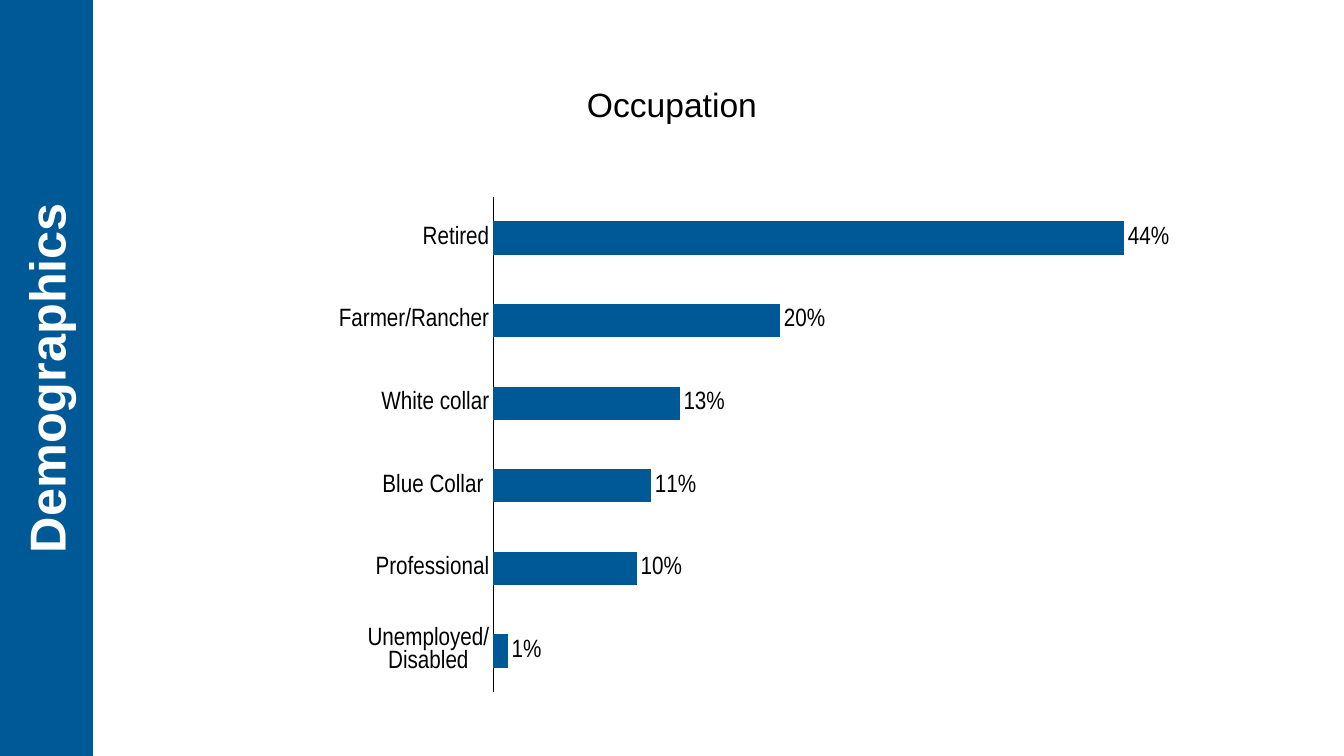
import pptx
import pptx.chart.data
import pptx.dml.color
import pptx.enum.chart
import pptx.enum.shapes
import pptx.enum.text
import pptx.oxml
import pptx.oxml.ns
import pptx.util

PX = 914400 / 100.8
WIDTH, HEIGHT = 1344, 756
BLUE = pptx.dml.color.RGBColor(0x00, 0x59, 0x97)
BLACK = pptx.dml.color.RGBColor(0, 0, 0)
WHITE = pptx.dml.color.RGBColor(0xFF, 0xFF, 0xFF)
FONT, LABEL_FONT = "Arial", "Arial Narrow"
OCCUPATIONS = {
    "Retired": 0.44,
    "Farmer/Rancher": 0.20,
    "White collar": 0.13,
    "Blue Collar ": 0.11,
    "Professional": 0.10,
    "Unemployed/Disabled": 0.01,
}


def px(*lengths):
    return [pptx.util.Emu(round(n * PX)) for n in lengths]


def style_font(font, size, color, name=FONT, bold=False):
    font.name, font.size, font.bold = name, pptx.util.Pt(size), bold
    font.color.rgb = color


def write_line(tf, text, size, color, bold=False):
    p = tf.paragraphs[0]
    p.alignment = pptx.enum.text.PP_ALIGN.CENTER
    p.space_before = pptx.util.Pt(0)
    r = p.add_run()
    r.text = text
    style_font(r.font, size, color, bold=bold)


def add_sidebar(s, x, y, w, h, text):
    """Fill the upright box with a band whose text reads upwards."""
    left, top = x + (w - h) / 2, y + (h - w) / 2
    sp = s.shapes.add_shape(pptx.enum.shapes.MSO_SHAPE.RECTANGLE, *px(left, top, h, w))
    sp.rotation = 270
    sp.shadow.inherit = False
    sp.fill.solid()
    sp.fill.fore_color.rgb = BLUE
    sp.line.fill.background()
    tf = sp.text_frame
    tf.word_wrap = True
    tf.vertical_anchor = pptx.enum.text.MSO_ANCHOR.MIDDLE
    tf.margin_top, tf.margin_bottom = px(0, 2)
    write_line(tf, text, 36, WHITE, bold=True)


def place_title(s, x, y, w, h, text):
    title = s.shapes.title
    title.left, title.top, title.width, title.height = px(x, y, w, h)
    tf = title.text_frame
    tf.word_wrap = True
    tf.auto_size = pptx.enum.text.MSO_AUTO_SIZE.NONE
    tf.vertical_anchor = pptx.enum.text.MSO_ANCHOR.TOP
    write_line(tf, text, 24, BLACK)


def set_plot_layout(chart, x, y, w, h):
    """Place the inner plot area by fractions of the chart."""
    plot_area = chart.element.find(".//" + pptx.oxml.ns.qn("c:plotArea"))
    for layout in plot_area.findall(pptx.oxml.ns.qn("c:layout")):
        plot_area.remove(layout)
    sizes = "".join(f'<c:{k} val="{v}"/>' for k, v in zip("xywh", (x, y, w, h)))
    plot_area.insert(0, pptx.oxml.parse_xml(
        f'<c:layout {pptx.oxml.ns.nsdecls("c")}><c:manualLayout>'
        '<c:layoutTarget val="inner"/><c:xMode val="edge"/><c:yMode val="edge"/>'
        f"{sizes}</c:manualLayout></c:layout>"))


def add_occupation_chart(s, x, y, w, h):
    data = pptx.chart.data.CategoryChartData(number_format="0%")
    data.categories = list(OCCUPATIONS)
    data.add_series("Series 1", list(OCCUPATIONS.values()))
    chart = s.shapes.add_chart(
        pptx.enum.chart.XL_CHART_TYPE.BAR_CLUSTERED, *px(x, y, w, h), data).chart
    chart.has_legend = chart.has_title = False
    style_font(chart.font, 16, BLACK)
    set_plot_layout(chart, 0.213, 0, 0.774, 1)

    axis = chart.category_axis
    axis.reverse_order = True
    axis.major_tick_mark = pptx.enum.chart.XL_TICK_MARK.NONE
    axis.format.line.color.rgb = BLACK
    axis.format.line.width = pptx.util.Pt(1)
    style_font(axis.tick_labels.font, 18, BLACK, LABEL_FONT)

    values = chart.value_axis
    values.minimum_scale, values.maximum_scale, values.major_unit = 0, 0.5, 0.1
    values.has_major_gridlines = False
    values.visible = False

    plot = chart.plots[0]
    plot.gap_width = 150
    plot.vary_by_categories = False
    series = plot.series[0]
    series.format.fill.solid()
    series.format.fill.fore_color.rgb = BLUE
    labels = series.data_labels
    labels.show_value = True
    labels.number_format, labels.number_format_is_linked = "0%", False
    labels.position = pptx.enum.chart.XL_LABEL_POSITION.OUTSIDE_END
    style_font(labels.font, 18, BLACK, LABEL_FONT)


def main():
    prs = pptx.Presentation()
    prs.slide_width, prs.slide_height = px(WIDTH, HEIGHT)
    s = prs.slides.add_slide(prs.slide_layouts[5])
    add_occupation_chart(s, 296, 196, 926, 497)
    place_title(s, 320, 79, 704, 50, "Occupation")
    add_sidebar(s, 0, 0, 93, HEIGHT, "Demographics")
    prs.save("out.pptx")


if __name__ == "__main__":
    main()
